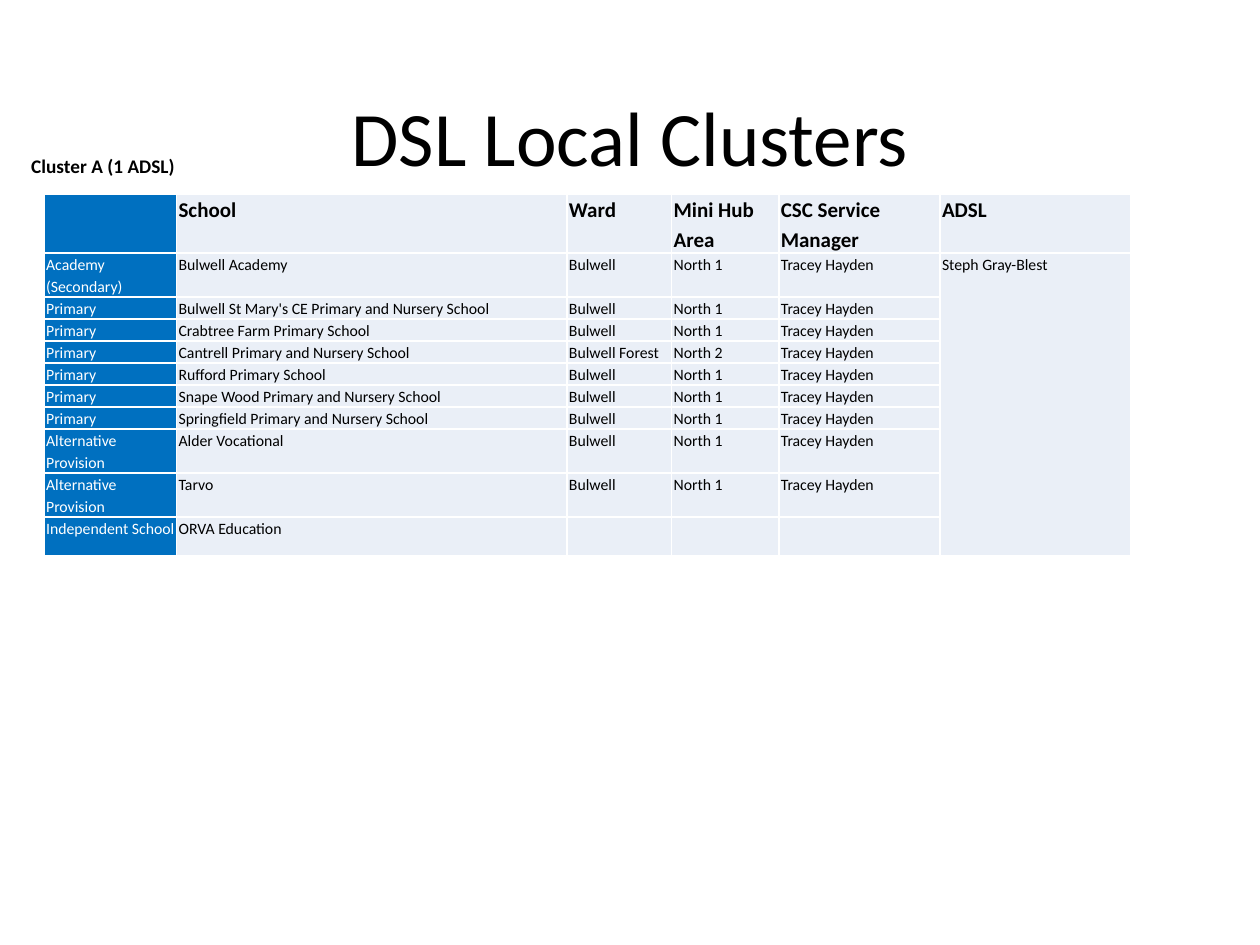
from dataclasses import dataclass

import pptx
import pptx.dml.color
import pptx.enum.text
import pptx.oxml
import pptx.oxml.ns
import pptx.util
from pptx.util import Cm


@dataclass(frozen=True)
class Theme:
    font: str = "Calibri"
    black: str = "000000"
    white: str = "FFFFFF"
    blue: str = "0070C0"
    pale: str = "EAEFF7"
    title_size: int = 44
    header_size: int = 12
    label_size: int = 11
    body_size: int = 9


THEME = Theme()
MANAGER = "Tracey Hayden"
HEADERS = ["", "School", "Ward", "Mini Hub Area", "CSC Service Manager", "ADSL"]
SCHOOLS = [
    ["Academy (Secondary)", "Bulwell Academy", "Bulwell", "North 1", MANAGER, "Steph Gray-Blest"],
    ["Primary", "Bulwell St Mary's CE Primary and Nursery School", "Bulwell", "North 1", MANAGER, ""],
    ["Primary", "Crabtree Farm Primary School", "Bulwell", "North 1", MANAGER, ""],
    ["Primary", "Cantrell Primary and Nursery School", "Bulwell Forest", "North 2", MANAGER, ""],
    ["Primary", "Rufford Primary School", "Bulwell", "North 1", MANAGER, ""],
    ["Primary", "Snape Wood Primary and Nursery School", "Bulwell", "North 1", MANAGER, ""],
    ["Primary", "Springfield Primary and Nursery School", "Bulwell", "North 1", MANAGER, ""],
    ["Alternative Provision", "Alder Vocational", "Bulwell", "North 1", MANAGER, ""],
    ["Alternative Provision", "Tarvo", "Bulwell", "North 1", MANAGER, ""],
    ["Independent School", "ORVA Education", "", "", "", ""],
]
COLUMN_WIDTHS = [2.67, 7.87, 2.11, 2.16, 3.25, 3.84]
ROW_HEIGHT = 0.44


def rgb(value):
    return pptx.dml.color.RGBColor.from_string(value)


def write_text(text_frame, text, size, color=THEME.black, bold=False, line_spacing=None):
    text_frame.text = text
    paragraph = text_frame.paragraphs[0]
    if line_spacing:
        paragraph.line_spacing = line_spacing
    for run in paragraph.runs:
        run.font.name = THEME.font
        run.font.size = pptx.util.Pt(size)
        run.font.bold = bold
        run.font.color.rgb = rgb(color)


def add_title(slide, text):
    title = slide.shapes.title
    title.left, title.top, title.width, title.height = Cm(1.75), Cm(1.02), Cm(21.9), Cm(3.68)
    title.text_frame.vertical_anchor = pptx.enum.text.MSO_ANCHOR.MIDDLE
    write_text(title.text_frame, text, THEME.title_size, line_spacing=0.9)
    title.text_frame.paragraphs[0].alignment = pptx.enum.text.PP_ALIGN.CENTER


def add_label(slide, text):
    label = slide.shapes.add_textbox(Cm(0.38), Cm(3.12), Cm(25.4), Cm(1.27))
    label.text_frame.word_wrap = True
    label.text_frame.margin_top = 0
    write_text(label.text_frame, text, THEME.label_size, bold=True)


def add_borders(cell):
    """Draw thin white lines on all four sides; call before filling the cell."""
    properties = cell._tc.get_or_add_tcPr()
    for side in ("lnL", "lnR", "lnT", "lnB"):
        properties.append(pptx.oxml.parse_xml(
            f'<a:{side} {pptx.oxml.ns.nsdecls("a")} w="12700"><a:solidFill>'
            f'<a:srgbClr val="{THEME.white}"/></a:solidFill></a:{side}>'))


def format_cell(cell, text, is_header, is_type):
    cell.margin_left = cell.margin_right = Cm(0.04)
    cell.margin_top = cell.margin_bottom = 0
    add_borders(cell)
    cell.fill.solid()
    cell.fill.fore_color.rgb = rgb(THEME.blue if is_type else THEME.pale)
    if text:
        write_text(cell.text_frame, text,
                   THEME.header_size if is_header else THEME.body_size,
                   THEME.white if is_type else THEME.black,
                   bold=is_header, line_spacing=1.15)


def add_school_table(slide):
    rows = [HEADERS] + SCHOOLS
    table = slide.shapes.add_table(
        len(rows), len(HEADERS), Cm(0.89), Cm(3.91),
        Cm(sum(COLUMN_WIDTHS)), Cm(ROW_HEIGHT * len(rows))).table
    table.first_row = table.horz_banding = False
    for column, width in zip(table.columns, COLUMN_WIDTHS):
        column.width = Cm(width)
    for row_index, row in enumerate(rows):
        for column_index, text in enumerate(row):
            format_cell(table.cell(row_index, column_index), text,
                        is_header=row_index == 0, is_type=column_index == 0)
    last_column = len(HEADERS) - 1
    table.cell(1, last_column).merge(table.cell(len(SCHOOLS), last_column))


def main():
    presentation = pptx.Presentation()
    presentation.slide_width, presentation.slide_height = Cm(25.4), Cm(19.05)
    slide = presentation.slides.add_slide(presentation.slide_layouts[5])
    add_school_table(slide)
    add_label(slide, "Cluster A (1 ADSL)")
    add_title(slide, "DSL Local Clusters")
    presentation.save("out.pptx")


if __name__ == "__main__":
    main()
